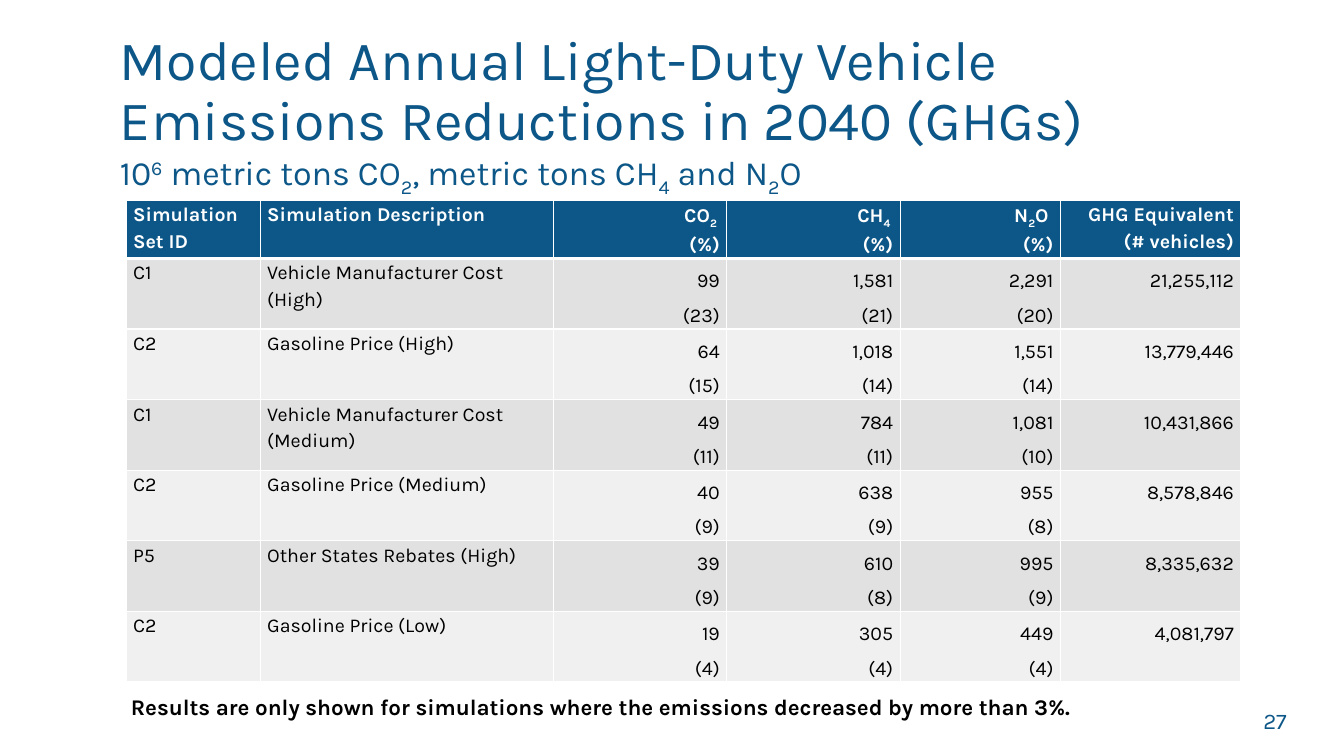
from copy import deepcopy
from dataclasses import dataclass

from lxml.etree import SubElement
from pptx import Presentation
from pptx.dml.color import RGBColor
from pptx.enum.text import MSO_ANCHOR, PP_ALIGN
from pptx.oxml.ns import qn
from pptx.util import Emu, Pt

PX = 9144  # EMU per px, 100 px to the inch
FONT = "Karla"
COLORS = {"blue": "0C5788", "white": "FFFFFF", "black": "000000",
          "odd": "E1E1E1", "even": "F0F0F0"}
BASELINES = {"_": "-25000", "^": "30000"}


@dataclass
class Result:
    set_id: str
    description: str
    co2: str
    ch4: str
    n2o: str
    vehicles: str


# Table content: "|" parts the runs, "_" lowers a run and "^" raises it
HEADERS = ["Simulation Set ID", "Simulation Description", "CO|_2 \n|(%)",
           "CH|_4 \n|(%)", "N|_2|O \n(%)", "GHG Equivalent (# vehicles)"]
RESULTS = [
    Result("C1", "Vehicle Manufacturer Cost (High)",
           "99 (23)", "1,581 (21)", "2,291 (20)", "21,255,112"),
    Result("C2", "Gasoline Price (High)",
           "64 (15)", "1,018 (14)", "1,551 (14)", "13,779,446"),
    Result("C1", "Vehicle Manufacturer Cost (Medium)",
           "49 (11)", "784 (11)", "1,081 (10)", "10,431,866"),
    Result("C2", "Gasoline Price (Medium)",
           "40 (9)", "638 (9)", "955 (8)", "8,578,846"),
    Result("P5", "Other States Rebates (High)",
           "39 (9)", "610 (8)", "995 (9)", "8,335,632"),
    Result("C2", "Gasoline Price (Low)",
           "19 (4)", "305 (4)", "449 (4)", "4,081,797"),
]
COLUMN_WIDTHS = [133, 291, 172, 172, 159, 179]
HEADER_HEIGHT, ROW_HEIGHT = 56, 70


def px(n: int) -> Emu:
    return Emu(n * PX)


def rgb(name: str) -> RGBColor:
    return RGBColor.from_string(COLORS[name])


def add_text(p, text: str, *, size: float = 14, color: str = "black",
             bold: bool = False, align=PP_ALIGN.LEFT, spacing: float = 1,
             before: int = 0, after: int = 0) -> None:
    """Add marked-up text to a paragraph and format it."""
    p.alignment, p.line_spacing = align, spacing
    p.space_before, p.space_after = Pt(before), Pt(after)
    for piece in text.split("|"):
        baseline = BASELINES.get(piece[0])
        lines = (piece[1:] if baseline else piece).split("\n")
        for i, line in enumerate(lines):
            if i:
                p.add_line_break()
                p._p.findall(qn("a:br"))[-1].append(deepcopy(r._r.rPr))
            if not line:
                continue
            r = p.add_run()
            r.text = line
            r.font.name, r.font.size, r.font.bold = FONT, Pt(size), bold
            r.font.color.rgb = rgb(color)
            if baseline:
                r._r.rPr.set("baseline", baseline)


def add_box(s, x: int, y: int, w: int, h: int, anchor=MSO_ANCHOR.TOP):
    """Add a wrapping text box and return its first paragraph."""
    tf = s.shapes.add_textbox(px(x), px(y), px(w), px(h)).text_frame
    tf.word_wrap, tf.vertical_anchor = True, anchor
    return tf.paragraphs[0]


def style_cell(cell, fill: str, bottom: int = 1) -> None:
    """Set the margins, white borders and fill of a cell."""
    cell.margin_left = cell.margin_right = px(7)
    cell.margin_top = cell.margin_bottom = 0
    tc_pr = cell._tc.get_or_add_tcPr()
    for side, width in zip("LRTB", (1, 1, 1, bottom)):
        ln = SubElement(tc_pr, qn(f"a:ln{side}"), w=str(Pt(width)))
        SubElement(SubElement(ln, qn("a:solidFill")), qn("a:srgbClr"),
                   val=COLORS["white"])
    cell.fill.solid()
    cell.fill.fore_color.rgb = rgb(fill)


def add_results(s, x: int, y: int) -> None:
    """Draw the table of emission reductions."""
    height = HEADER_HEIGHT + ROW_HEIGHT * len(RESULTS)
    table = s.shapes.add_table(len(RESULTS) + 1, len(HEADERS), px(x), px(y),
                               px(sum(COLUMN_WIDTHS)), px(height)).table
    for column, width in zip(table.columns, COLUMN_WIDTHS):
        column.width = px(width)
    for i, row in enumerate(table.rows):
        row.height = px(ROW_HEIGHT if i else HEADER_HEIGHT)

    # Header row
    for col, header in enumerate(HEADERS):
        cell = table.cell(0, col)
        style_cell(cell, "blue", bottom=3)
        add_text(cell.text_frame.paragraphs[0], header, color="white",
                 bold=True, spacing=1.15, before=6, after=6,
                 align=PP_ALIGN.LEFT if col < 2 else PP_ALIGN.RIGHT)

    # Result rows: each share stands in a paragraph under its value
    for row, res in enumerate(RESULTS, 1):
        for col, label in enumerate((res.set_id, res.description)):
            cell = table.cell(row, col)
            style_cell(cell, "odd" if row % 2 else "even")
            add_text(cell.text_frame.paragraphs[0], label,
                     spacing=1.15, after=10)
        values = (res.co2, res.ch4, res.n2o, res.vehicles)
        for col, value in enumerate(values, 2):
            cell = table.cell(row, col)
            style_cell(cell, "odd" if row % 2 else "even")
            tf = cell.text_frame
            for i, line in enumerate(value.split()):
                p = tf.add_paragraph() if i else tf.paragraphs[0]
                add_text(p, line, align=PP_ALIGN.RIGHT, spacing=1.5)


def main() -> None:
    prs = Presentation()
    prs.slide_width, prs.slide_height = px(1333), px(750)
    s = prs.slides.add_slide(prs.slide_layouts[6])

    # Title and units
    title = add_box(s, 109, 40, 1122, 145, MSO_ANCHOR.MIDDLE)
    add_text(title, "Modeled Annual Light-Duty Vehicle Emissions Reductions "
             "in 2040 (GHGs)\n", size=39.6, color="blue", spacing=0.9)
    add_text(title, "10|^6| metric tons CO|_2|, metric tons CH|_4| and N|_2|O",
             size=24.3, color="blue", spacing=0.9)

    # Slide number and note
    add_text(add_box(s, 942, 695, 344, 40, MSO_ANCHOR.MIDDLE), "27",
             size=16, color="blue", align=PP_ALIGN.RIGHT)
    add_text(add_box(s, 120, 679, 1106, 38),
             "Results are only shown for simulations where the emissions "
             "decreased by more than 3%.",
             size=16, bold=True, spacing=1.15, before=6)

    add_results(s, 125, 199)
    prs.save("out.pptx")


if __name__ == "__main__":
    main()
